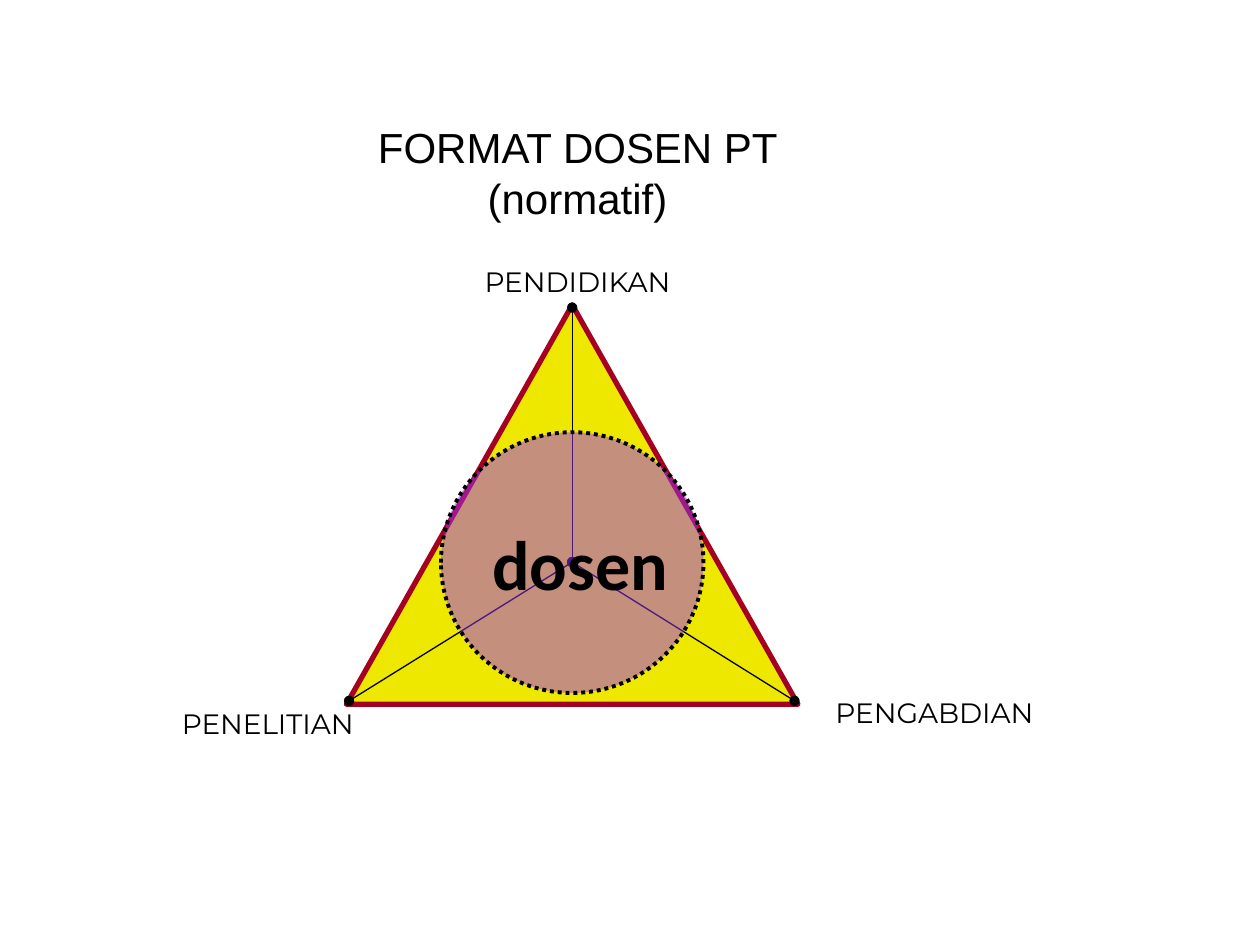
from lxml.etree import SubElement
from pptx import Presentation
from pptx.dml.color import RGBColor
from pptx.enum.dml import MSO_LINE
from pptx.enum.shapes import MSO_CONNECTOR, MSO_SHAPE
from pptx.enum.text import MSO_ANCHOR, MSO_AUTO_SIZE, PP_ALIGN
from pptx.oxml.ns import qn
from pptx.util import Pt

COLORS = {
    "black": "000000",
    "triangle": "EEE800",
    "edge": "A50021",
    "circle": "9933FF",
}


def color(name):
    return RGBColor.from_string(COLORS[name])


def place(shape, box):
    shape.left, shape.top, shape.width, shape.height = (Pt(value) for value in box)


def format_text(shape, text, font_name, size, bold=False, wrap=True):
    frame = shape.text_frame
    frame.text = text
    frame.word_wrap = wrap
    frame.auto_size = MSO_AUTO_SIZE.NONE
    frame.vertical_anchor = MSO_ANCHOR.TOP
    paragraph = frame.paragraphs[0]
    paragraph.alignment = PP_ALIGN.CENTER
    paragraph.font.name = font_name
    paragraph.font.size = Pt(size)
    paragraph.font.bold = bold
    paragraph.font.color.rgb = color("black")


def add_text(slide, box, *text_format, **options):
    shape = slide.shapes.add_textbox(*(Pt(value) for value in box))
    format_text(shape, *text_format, **options)


def add_filled_shape(shapes, kind, box, fill, line, line_width):
    shape = shapes.add_shape(kind, *(Pt(value) for value in box))
    shape.shadow.inherit = False
    shape.fill.solid()
    shape.fill.fore_color.rgb = color(fill)
    shape.line.color.rgb = color(line)
    shape.line.width = Pt(line_width)
    return shape


def add_spoke(shapes, start, end):
    """Thin line with a dot at both ends."""
    points = (Pt(value) for value in (*start, *end))
    spoke = shapes.add_connector(MSO_CONNECTOR.STRAIGHT, *points)
    spoke.line.color.rgb = color("black")
    spoke.line.width = Pt(0.75)
    line = spoke.line._get_or_add_ln()
    for end_tag in ("a:headEnd", "a:tailEnd"):
        SubElement(line, qn(end_tag), type="oval")
    SubElement(spoke._element.spPr, qn("a:effectLst"))


def add_title(slide, box):
    title = slide.shapes.title
    place(title, box)
    format_text(title, "FORMAT DOSEN PT (normatif)", "Arial", 24)


def add_triangle(slide, box):
    """Triangle with spokes from its corners to the hub."""
    left, top, width, height = box
    group = slide.shapes.add_group_shape()
    add_filled_shape(
        group.shapes, MSO_SHAPE.ISOSCELES_TRIANGLE, box, "triangle", "edge", 3
    )
    middle, base = left + width / 2, top + height - 2
    hub = (middle, top + 147)
    corners = [(left + 1.5, base), (left + width - 2, base), (middle, top + 1.5)]
    for corner in corners:
        add_spoke(group.shapes, corner, hub)


def add_corner_labels(slide, box):
    left, top, width, height = box
    labels = [
        ("PENDIDIKAN", left + width / 2 - 63, top - 26.5, 132),
        ("PENGABDIAN", left + width - 6, top + height - 8.5, 168),
        ("PENELITIAN", left - 108, top + height - 2.5, 126),
    ]
    for text, label_left, label_top, label_width in labels:
        add_text(slide, (label_left, label_top, label_width, 26.5), text, "Montserrat", 16)


def add_lecturer_circle(slide, box):
    left, top, width, height = box
    circle = add_filled_shape(
        slide.shapes, MSO_SHAPE.OVAL, box, "circle", "black", 2.25
    )
    circle.line.dash_style = MSO_LINE.ROUND_DOT
    fill_color = circle._element.spPr.find(qn("a:solidFill"))[0]
    SubElement(fill_color, qn("a:alpha"), val="49000")
    text_box = (left + 21.5, top + 46.75, 116, 55.5)
    add_text(slide, text_box, "dosen", "Calibri", 40, bold=True, wrap=False)


def main():
    presentation = Presentation()
    presentation.slide_width, presentation.slide_height = Pt(720), Pt(540)
    slide = presentation.slides.add_slide(presentation.slide_layouts[5])
    triangle_box = (198, 174.25, 258, 228.25)
    add_title(slide, (156, 66, 348, 65.5))
    add_triangle(slide, triangle_box)
    add_corner_labels(slide, triangle_box)
    add_lecturer_circle(slide, (252, 247, 150, 149))
    presentation.save("out.pptx")


if __name__ == "__main__":
    main()
